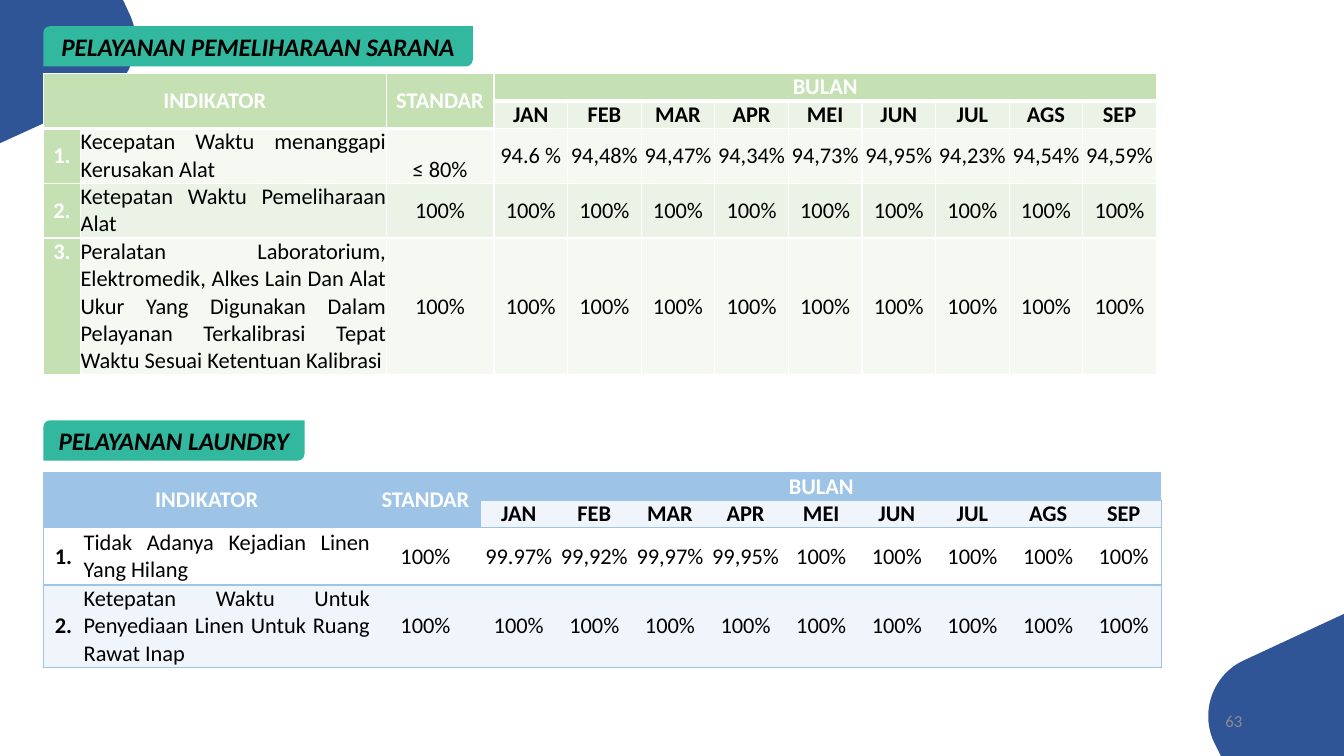
"""Build the slide of hospital maintenance and laundry service indicators."""
import pptx
import pptx.dml.color
import pptx.enum.shapes
import pptx.enum.text
import pptx.oxml
import pptx.oxml.ns
import pptx.util

COLUMNS, ROWS = 13.33, 7.5
LEFT = 0.43
NAVY, TEAL, GREEN, BLUE = "2F5597", "32B89E", "C5E0B3", "9DC3E6"
WHITE, BLACK, GREY = "FFFFFF", "000000", "8C8C8C"
MONTHS = ["JAN", "FEB", "MAR", "APR", "MEI", "JUN", "JUL", "AGS", "SEP"]
FULL = ["100%"] * len(MONTHS)
ALIGN = pptx.enum.text.PP_ALIGN
ANCHOR = pptx.enum.text.MSO_ANCHOR

MAINTENANCE = [
    ["1.", "Kecepatan Waktu menanggapi Kerusakan Alat", "≤ 80%", "94.6 %", "94,48%",
     "94,47%", "94,34%", "94,73%", "94,95%", "94,23%", "94,54%", "94,59%"],
    ["2.", "Ketepatan Waktu Pemeliharaan Alat", "100%", *FULL],
    ["3.", "Peralatan Laboratorium, Elektromedik, Alkes Lain Dan Alat Ukur Yang Digunakan "
     "Dalam Pelayanan Terkalibrasi Tepat Waktu Sesuai Ketentuan Kalibrasi", "100%", *FULL],
]
LAUNDRY = [
    ["1.", "Tidak Adanya Kejadian Linen Yang Hilang", "100%",
     "99.97%", "99,92%", "99,97%", "99,95%", *FULL[4:]],
    ["2.", "Ketepatan Waktu Untuk Penyediaan Linen Untuk Ruang Rawat Inap", "100%", *FULL],
]


def grid(count):
    """Return the length of a number of grid cells, each one inch square."""
    return pptx.util.Inches(count)


def color(value):
    """Return the colour of a hex string."""
    return pptx.dml.color.RGBColor.from_string(value)


def paint(target, value):
    """Fill a shape or a table cell with one colour."""
    target.fill.solid()
    target.fill.fore_color.rgb = color(value)


def write(frame, words, size, ink, align=ALIGN.CENTER, bold=False, italic=False):
    """Write one styled paragraph into a text frame."""
    frame.word_wrap = True
    paragraph = frame.paragraphs[0]
    paragraph.text = words
    paragraph.alignment = align
    font = paragraph.font
    font.name, font.size = "Calibri", pptx.util.Pt(size)
    font.bold, font.italic = bold, italic
    font.color.rgb = color(ink)


def curve(start, first, second, end, steps=24):
    """Return points along a cubic curve, without its start."""
    points = []
    for step in range(1, steps + 1):
        t = step / steps
        weights = ((1 - t) ** 3, 3 * t * (1 - t) ** 2, 3 * t * t * (1 - t), t ** 3)
        points.append(tuple(
            sum(weight * value for weight, value in zip(weights, axis))
            for axis in zip(start, first, second, end)))
    return points


def add_corner(slide, points):
    """Add a rounded navy outline in a corner of the slide."""
    start, *others = [(grid(x), grid(y)) for x, y in points]
    builder = slide.shapes.build_freeform(*start)
    builder.add_line_segments(others, close=True)
    corner = builder.convert_to_shape()
    paint(corner, NAVY)
    corner.line.fill.background()
    corner.shadow.inherit = False


def add_heading(slide, top, width, words):
    """Add a teal section heading."""
    heading = slide.shapes.add_shape(
        pptx.enum.shapes.MSO_SHAPE.ROUND_2_DIAG_RECTANGLE,
        grid(LEFT), grid(top), grid(width), grid(0.4))
    paint(heading, TEAL)
    heading.line.fill.background()
    heading.shadow.inherit = False
    heading.text_frame.vertical_anchor = ANCHOR.MIDDLE
    write(heading.text_frame, words, 18, BLACK, bold=True, italic=True)


def add_border(cell, side, ink, points):
    """Draw one side of a cell, or leave it clear when ink is None."""
    paint_xml = f'<a:solidFill><a:srgbClr val="{ink}"/></a:solidFill>' if ink else "<a:noFill/>"
    cell._tc.get_or_add_tcPr().append(pptx.oxml.parse_xml(
        f'<a:ln{side} {pptx.oxml.ns.nsdecls("a")} w="{pptx.util.Pt(points)}">'
        f'{paint_xml}</a:ln{side}>'))


def add_indicators(slide, top, widths, heights, records, accent, bands, number_ink, borders):
    """Add a table of indicators with a two-row heading and monthly values."""
    content = [["INDIKATOR", "", "STANDAR", "BULAN"] + [""] * (len(MONTHS) - 1),
               ["", "", "", *MONTHS], *records]
    table = slide.shapes.add_table(
        len(content), len(widths), grid(LEFT), grid(top),
        grid(sum(widths)), grid(sum(heights))).table
    table.first_row = table.horz_banding = False
    for column, width in zip(table.columns, widths):
        column.width = grid(width)
    for row, height in zip(table.rows, heights):
        row.height = grid(height)

    for r, record in enumerate(content):
        for c, words in enumerate(record):
            cell = table.cell(r, c)
            heading = r == 0 or (r == 1 and c < 3)
            numbered = r > 1 and c == 0
            for side, (ink, points) in borders(r, c).items():
                add_border(cell, side, ink, points)
            accented = heading or (numbered and number_ink == WHITE)
            paint(cell, accent if accented else bands[r % 2])
            cell.margin_left = cell.margin_right = cell.margin_top = cell.margin_bottom = 0
            cell.vertical_anchor = ANCHOR.MIDDLE
            ink = WHITE if heading else number_ink if numbered else BLACK
            align = ALIGN.JUSTIFY if r > 1 and c == 1 else ALIGN.CENTER
            write(cell.text_frame, words, 16, ink, align, bold=r < 2 or numbered)

    table.cell(0, 0).merge(table.cell(1, 1))
    table.cell(0, 2).merge(table.cell(1, 2))
    table.cell(0, 3).merge(table.cell(0, len(widths) - 1))
    return table


def white_grid(r, c):
    """Return white borders, heavier below the first heading row."""
    return {"L": (WHITE, 1), "R": (WHITE, 1), "T": (WHITE, 3 if r == 1 else 1),
            "B": (WHITE, 3 if r == 0 else 1)}


def blue_rules(r, c):
    """Return blue borders around every row, with none between columns."""
    last = len(MONTHS) + 2
    return {"L": (BLUE if c == 0 else None, 1), "R": (BLUE if c == last else None, 1),
            "T": (BLUE, 1), "B": (BLUE, 1)}


def add_page_number(slide, number):
    """Add the page number at the lower right."""
    box = slide.shapes.add_textbox(grid(9.42), grid(6.95), grid(3), grid(0.4))
    box.text_frame.vertical_anchor = ANCHOR.MIDDLE
    write(box.text_frame, number, 12, GREY, ALIGN.RIGHT)


def main():
    """Build and save the slide."""
    deck = pptx.Presentation()
    deck.slide_width, deck.slide_height = grid(COLUMNS), grid(ROWS)
    slide = deck.slides.add_slide(deck.slide_layouts[6])

    add_corner(slide, [(COLUMNS, ROWS), (12.11, ROWS), (12.04, 7.36),
                       *curve((12.04, 7.36), (11.9, 7.06), (12.03, 6.69), (12.34, 6.55)),
                       (COLUMNS, 6.09)])
    add_corner(slide, [(0, 0), (1.22, 0), (1.29, 0.15),
                       *curve((1.29, 0.15), (1.43, 0.46), (1.29, 0.83), (0.99, 0.97)),
                       (0, 1.42)])

    maintenance = add_indicators(
        slide, 0.73, [0.37, 3.03, 1.07] + [0.73] * len(MONTHS), [0.21, 0.21, 0.42, 0.42, 0.95],
        MAINTENANCE, GREEN, ["F5F9F2", "EAF3E5"], WHITE, white_grid)
    maintenance.cell(2, 2).vertical_anchor = ANCHOR.BOTTOM
    for c in range(2):
        maintenance.cell(4, c).vertical_anchor = ANCHOR.TOP
    add_indicators(
        slide, 4.69, [0.4, 2.84, 1.1] + [0.75] * len(MONTHS), [0.24, 0.24, 0.57, 0.76],
        LAUNDRY, BLUE, [WHITE, "EFF5FA"], BLACK, blue_rules)

    add_heading(slide, 0.26, 4.26, "PELAYANAN PEMELIHARAAN SARANA")
    add_heading(slide, 4.17, 2.59, "PELAYANAN LAUNDRY")
    add_page_number(slide, "63")
    deck.save("out.pptx")


if __name__ == "__main__":
    main()
